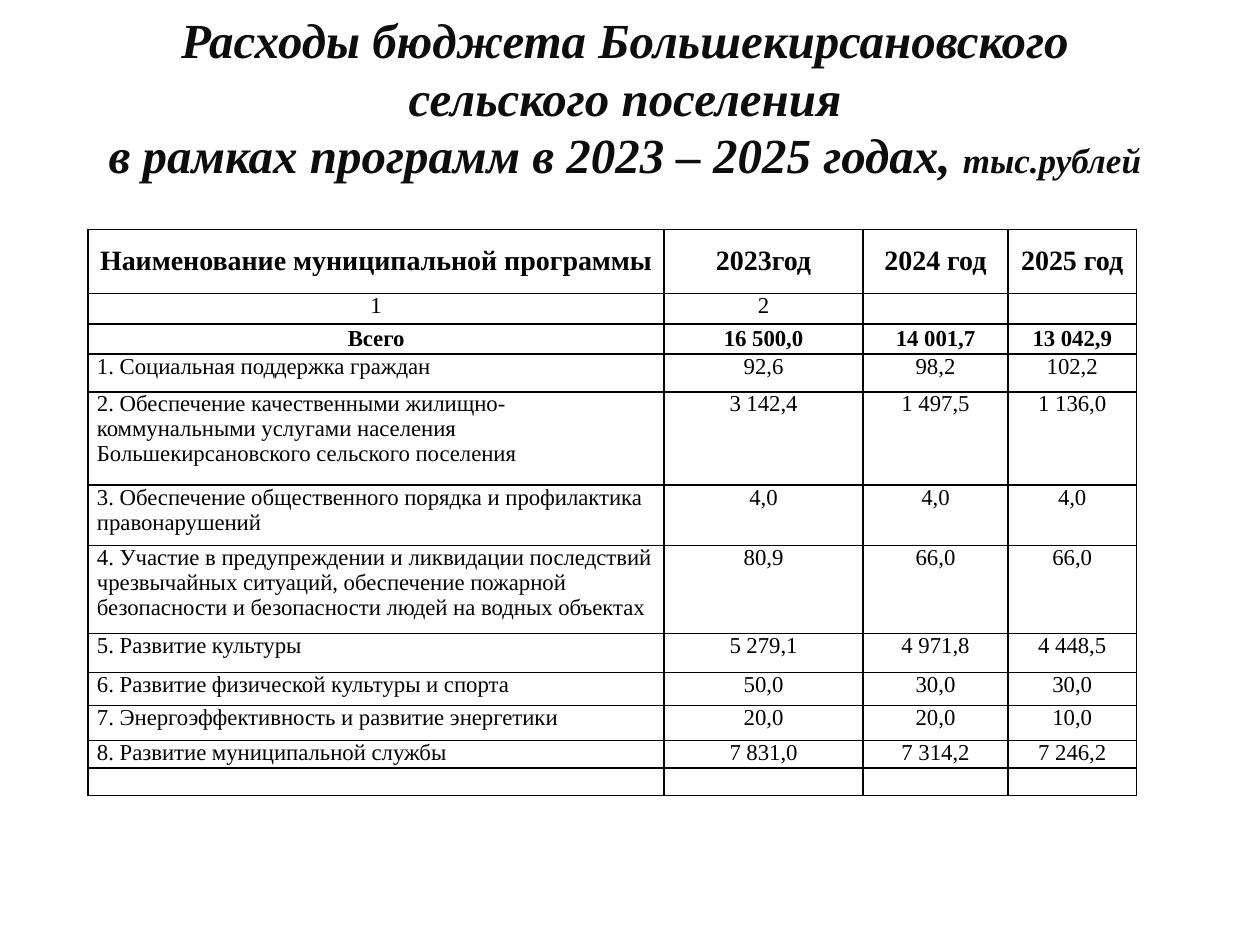
from dataclasses import dataclass

import pptx
import pptx.dml.color
import pptx.enum.text
import pptx.oxml
import pptx.oxml.ns
import pptx.util
from pptx.util import Inches

ALIGN = pptx.enum.text.PP_ALIGN
ANCHOR = pptx.enum.text.MSO_ANCHOR


@dataclass(frozen=True)
class Theme:
    font: str = "Times New Roman"
    title_color: str = "0D0D0D"
    table_color: str = "000000"
    title_size: int = 28
    unit_size: int = 20
    header_size: int = 16
    body_size: int = 13
    border_width: int = 1


THEME = Theme()

TITLE = ("Расходы бюджета Большекирсановского\vсельского поселения\v"
         "в рамках программ в 2023 – 2025 годах, ")
UNIT = "тыс.рублей"

COLUMN_WIDTHS = (4.57, 1.58, 1.15, 1.02)
# Row height followed by the cell texts
BUDGET_ROWS = (
    (0.51, "Наименование муниципальной программы", "2023год", "2024 год", "2025 год"),
    (0.24, "1", "2", "", ""),
    (0.24, "Всего", "16 500,0", "14 001,7", "13 042,9"),
    (0.3, "1. Социальная поддержка граждан", "92,6", "98,2", "102,2"),
    (0.74, "2. Обеспечение качественными жилищно-коммунальными услугами населения "
           "Большекирсановского сельского поселения", "3 142,4", "1 497,5", "1 136,0"),
    (0.48, "3. Обеспечение общественного порядка и профилактика правонарушений",
     "4,0", "4,0", "4,0"),
    (0.7, "4. Участие в предупреждении и ликвидации последствий чрезвычайных ситуаций, "
          "обеспечение пожарной безопасности и безопасности людей на водных объектах",
     "80,9", "66,0", "66,0"),
    (0.31, "5. Развитие культуры", "5 279,1", "4 971,8", "4 448,5"),
    (0.26, "6. Развитие физической культуры и спорта", "50,0", "30,0", "30,0"),
    (0.28, "7. Энергоэффективность и развитие энергетики", "20,0", "20,0", "10,0"),
    (0.2, "8. Развитие муниципальной службы", "7 831,0", "7 314,2", "7 246,2"),
    (0.2, "", "", "", ""),
)
HEADER_ROW, NUMBER_ROW, TOTAL_ROW = range(3)


def write(paragraph, text, *, size, color, bold=False, italic=False, align=ALIGN.CENTER):
    """Append text to the paragraph; \\v in it becomes a line break."""
    paragraph.alignment = align
    for index, line in enumerate(text.split("\v")):
        if index:
            paragraph.add_line_break()
        run = paragraph.add_run()
        run.text = line
        run.font.name = THEME.font
        run.font.size = pptx.util.Pt(size)
        run.font.bold = bold
        run.font.italic = italic
        run.font.color.rgb = pptx.dml.color.RGBColor.from_string(color)


def set_empty_size(paragraph, size):
    """Keep an empty cell from taking the default 18 pt line height."""
    paragraph._p.append(pptx.oxml.parse_xml(
        f'<a:endParaRPr {pptx.oxml.ns.nsdecls("a")} sz="{size * 100}">'
        f'<a:latin typeface="{THEME.font}"/></a:endParaRPr>'))


def add_borders(cell):
    properties = cell._tc.get_or_add_tcPr()
    width = pptx.util.Pt(THEME.border_width)
    for index, side in enumerate(("lnL", "lnR", "lnT", "lnB")):
        properties.insert(index, pptx.oxml.parse_xml(
            f'<a:{side} {pptx.oxml.ns.nsdecls("a")} w="{width}"><a:solidFill>'
            f'<a:srgbClr val="{THEME.table_color}"/></a:solidFill></a:{side}>'))


def add_title(slide, left, top, width, height):
    frame = slide.shapes.add_textbox(left, top, width, height).text_frame
    frame.word_wrap = True
    frame.vertical_anchor = ANCHOR.MIDDLE
    heading = frame.paragraphs[0]
    heading.line_spacing = 0.98
    style = dict(color=THEME.title_color, bold=True, italic=True)
    write(heading, TITLE, size=THEME.title_size, **style)
    write(heading, UNIT, size=THEME.unit_size, **style)


def fill_cell(cell, text, row, column):
    cell.margin_left = cell.margin_right = Inches(0.07)
    cell.margin_top = cell.margin_bottom = 0
    cell.fill.background()
    add_borders(cell)
    emphasized = row in (HEADER_ROW, TOTAL_ROW)
    cell.vertical_anchor = ANCHOR.MIDDLE if emphasized else ANCHOR.TOP
    paragraph = cell.text_frame.paragraphs[0]
    if not text:
        set_empty_size(paragraph, THEME.body_size)
        return
    is_program_name = column == 0 and row > TOTAL_ROW
    write(paragraph, text, color=THEME.table_color, bold=emphasized,
          size=THEME.header_size if row == HEADER_ROW else THEME.body_size,
          align=ALIGN.LEFT if is_program_name else ALIGN.CENTER)


def add_budget_table(slide, left, top, width, height):
    budget = slide.shapes.add_table(
        len(BUDGET_ROWS), len(COLUMN_WIDTHS), left, top, width, height).table
    budget.first_row = budget.horz_banding = False
    for column, column_width in zip(budget.columns, COLUMN_WIDTHS):
        column.width = Inches(column_width)
    for row, (row_height, *texts) in enumerate(BUDGET_ROWS):
        budget.rows[row].height = Inches(row_height)
        for column, text in enumerate(texts):
            fill_cell(budget.cell(row, column), text, row, column)


def main():
    deck = pptx.Presentation()
    deck.slide_width, deck.slide_height = Inches(10), Inches(7.5)
    slide = deck.slides.add_slide(deck.slide_layouts[6])
    add_title(slide, Inches(0.31), Inches(0.16), Inches(9.3), Inches(1.25))
    add_budget_table(slide, Inches(0.7), Inches(1.82), Inches(sum(COLUMN_WIDTHS)),
                     Inches(sum(row[0] for row in BUDGET_ROWS)))
    deck.save("out.pptx")


if __name__ == "__main__":
    main()
